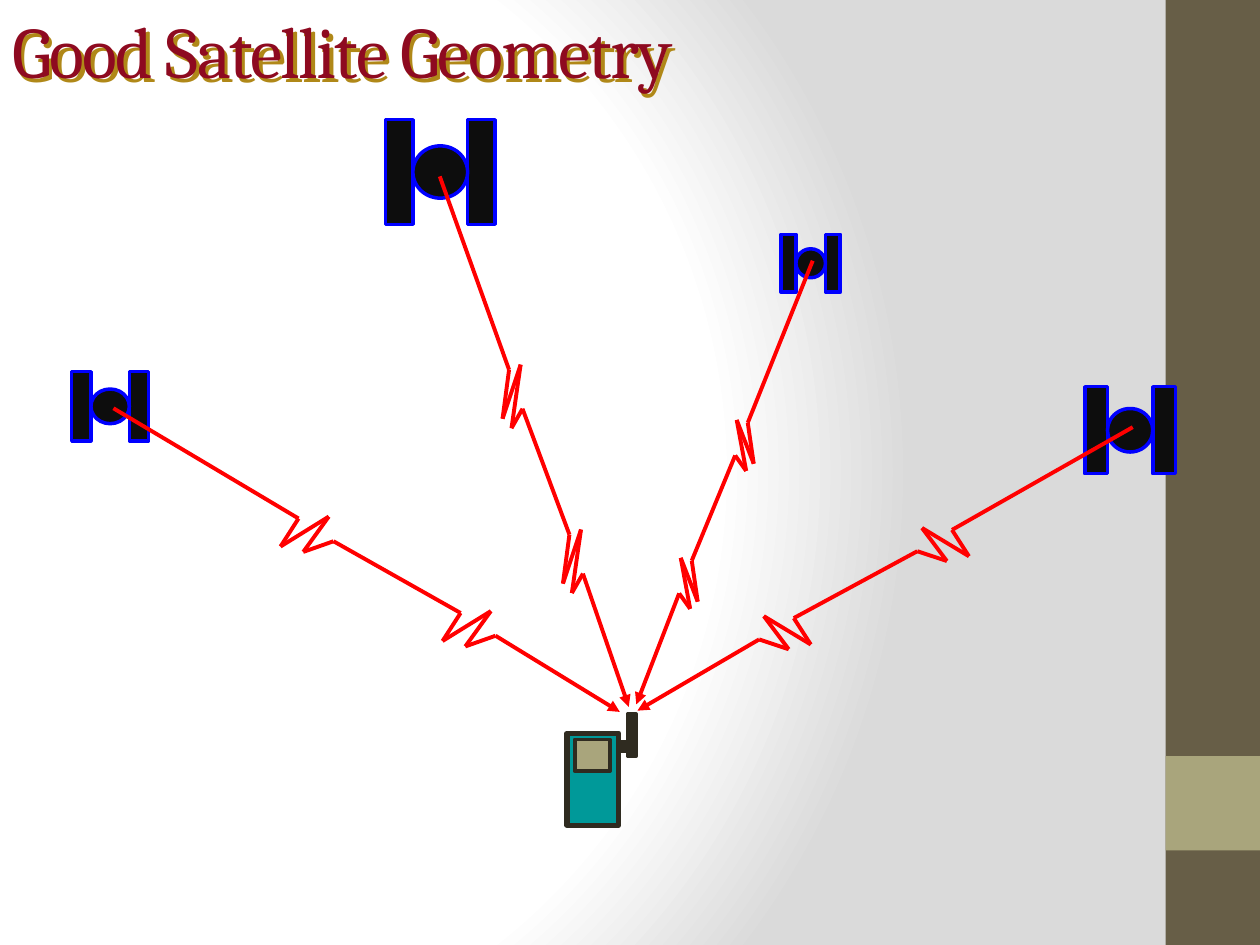
from lxml import etree
from pptx import Presentation
from pptx.dml.color import RGBColor
from pptx.enum.shapes import MSO_CONNECTOR, MSO_SHAPE
from pptx.enum.text import MSO_ANCHOR
from pptx.oxml import parse_xml
from pptx.oxml.ns import nsdecls, qn
from pptx.util import Pt

RECTANGLE, OVAL = MSO_SHAPE.RECTANGLE, MSO_SHAPE.OVAL
STRAIGHT = MSO_CONNECTOR.STRAIGHT
MIDDLE = MSO_ANCHOR.MIDDLE

WHITE = RGBColor(0xFF, 0xFF, 0xFF)
LIGHT_GRAY = RGBColor(0xDA, 0xDA, 0xDA)
OLIVE = RGBColor(0x67, 0x5E, 0x47)
KHAKI = RGBColor(0xA9, 0xA5, 0x7C)
BLACK = RGBColor(0x0D, 0x0D, 0x0D)
BLUE = RGBColor(0x00, 0x00, 0xFF)
TEAL = RGBColor(0x00, 0x99, 0x99)
DARK_BROWN = RGBColor(0x2F, 0x2B, 0x20)
CRIMSON = RGBColor(0x8E, 0x0A, 0x20)
GOLD = RGBColor(0xB0, 0x88, 0x18)
RED = RGBColor(0xFF, 0x00, 0x00)

SLIDE_WIDTH, SLIDE_HEIGHT = 720, 540

# Boxes are left, top, width, height in points.
SATELLITE_BOXES = [
    (446.4, 133.9, 33.8, 33.1),
    (220.3, 68.4, 62.6, 59.8),
    (619.9, 221, 51.8, 49.7),
    (41, 212.4, 43.9, 39.6),
]

# Start, the two places where the signal breaks, end, and the shape of a break.
SIGNALS = [
    ((251.3, 100.8), [(290.9, 211.3), (325.4, 305.5)], (359.3, 403.9),
     [(0, 0), (-3.7, 28), (6.6, -2.9), (1.4, 33.4), (7.7, 22.3)]),
    ((647.3, 244.1), [(544, 302.8), (453.6, 353.2)], (364.3, 406.1),
     [(0, 0), (9.7, 15.1), (-17.1, -1.1), (-2.9, 17.8), (-19.8, 12.2)]),
    ((64.8, 233.3), [(170.6, 296.3), (263.2, 350.3)], (354.2, 406.8),
     [(0, 0), (-10.3, 16), (17.3, -1.1), (2.7, 19.1), (20, 13)]),
    ((464.4, 149), [(427.3, 241.6), (395.3, 320.4)], (363.6, 402.5),
     [(0, 0), (3.4, 23.4), (-6.3, -1.6), (-0.9, 27.5), (-7.2, 18.7)]),
]


def add_filled_shape(shapes, kind, box, fill, line=None, line_width=0):
    shape = shapes.add_shape(kind, *(Pt(length) for length in box))
    shape.shadow.inherit = False
    shape.fill.solid()
    shape.fill.fore_color.rgb = fill
    if line is None:
        shape.line.fill.background()
    else:
        shape.line.color.rgb = line
        shape.line.width = Pt(line_width)
    return shape


def set_background(slide):
    """Fill the background with a radial gradient centred left of the middle."""
    slide.background.fill.solid()
    solid_fill = slide.element.find(".//" + qn("a:solidFill"))
    stops = "".join(
        f'<a:gs pos="{position}"><a:srgbClr val="{color}"/></a:gs>'
        for position, color in [(0, WHITE), (75000, WHITE), (100000, LIGHT_GRAY)]
    )
    gradient = parse_xml(
        f'<a:gradFill {nsdecls("a")} rotWithShape="1"><a:gsLst>{stops}</a:gsLst>'
        '<a:path path="circle">'
        '<a:fillToRect l="20000" t="50000" r="100000" b="50000"/>'
        '</a:path></a:gradFill>'
    )
    solid_fill.getparent().replace(solid_fill, gradient)


def add_side_band(shapes, box):
    left, top, width, height = box
    add_filled_shape(shapes, RECTANGLE, box, OLIVE)
    add_filled_shape(shapes, RECTANGLE,
                     (left, top + height * 0.8, width, width), KHAKI)


def add_title(shapes, box):
    title = shapes.add_textbox(*(Pt(length) for length in box))
    text_frame = title.text_frame
    text_frame.word_wrap = True
    text_frame.vertical_anchor = MIDDLE
    text_frame.text = "Good Satellite Geometry"
    run = text_frame.paragraphs[0].runs[0]
    run.font.size = Pt(41.4)
    run.font.name = "Cambria"
    run.font.color.rgb = CRIMSON
    run.font._element.set("spc", "-100")
    title.element.spPr.append(parse_xml(
        f'<a:effectLst {nsdecls("a")}>'
        f'<a:outerShdw dist="{Pt(2.8)}" dir="2700000" algn="tl" rotWithShape="0">'
        f'<a:srgbClr val="{GOLD}"/></a:outerShdw></a:effectLst>'
    ))


def add_satellite(shapes, box):
    """Draw two panels, each a quarter of the width, with a round body between."""
    left, top, width, height = box
    satellite = shapes.add_group_shape().shapes
    panel_width = width / 4
    for panel_left in (left, left + width - panel_width):
        add_filled_shape(satellite, RECTANGLE,
                         (panel_left, top, panel_width, height), BLACK, BLUE, 2)
    body = (left + panel_width, top + height / 4, width / 2, height / 2)
    add_filled_shape(satellite, OVAL, body, BLACK, BLUE, 2)


def add_receiver(shapes, left, top):
    receiver = shapes.add_group_shape().shapes
    parts = [
        ((0, 10.8, 29.5, 52.6), TEAL, 3),  # body
        ((4.3, 14.4, 20.2, 18), KHAKI, 2.25),  # screen
        ((34.6, 0, 5, 23.8), DARK_BROWN, 2.25),  # antenna
        ((29.5, 15.8, 8.6, 5), DARK_BROWN, 2.25),  # antenna bracket
    ]
    for (x, y, width, height), fill, line_width in parts:
        add_filled_shape(receiver, RECTANGLE, (left + x, top + y, width, height),
                         fill, DARK_BROWN, line_width)


def add_signal(shapes, start, breaks, end, zigzag):
    """Draw a line from start to end with the same zigzag at each break."""
    points = [start]
    points += [(x + dx, y + dy) for x, y in breaks for dx, dy in zigzag]
    points.append(end)
    signal = shapes.add_group_shape().shapes
    for (x1, y1), (x2, y2) in zip(points, points[1:]):
        connector = signal.add_connector(STRAIGHT, Pt(x1), Pt(y1), Pt(x2), Pt(y2))
        connector.line.color.rgb = RED
        connector.line.width = Pt(2.25)
        etree.SubElement(connector.element.spPr, qn("a:effectLst"))
    line = connector.element.spPr.find(qn("a:ln"))
    etree.SubElement(line, qn("a:tailEnd"), type="triangle")


def main():
    presentation = Presentation()
    presentation.slide_width = Pt(SLIDE_WIDTH)
    presentation.slide_height = Pt(SLIDE_HEIGHT)
    slide = presentation.slides.add_slide(presentation.slide_layouts[6])
    shapes = slide.shapes

    set_background(slide)
    add_side_band(shapes, (666, 0, 54, SLIDE_HEIGHT))
    for box in SATELLITE_BOXES:
        add_satellite(shapes, box)
    add_receiver(shapes, 324, 408.2)
    add_title(shapes, (0, 0, SLIDE_WIDTH, 57))
    for signal in SIGNALS:
        add_signal(shapes, *signal)

    presentation.save("out.pptx")


if __name__ == "__main__":
    main()
